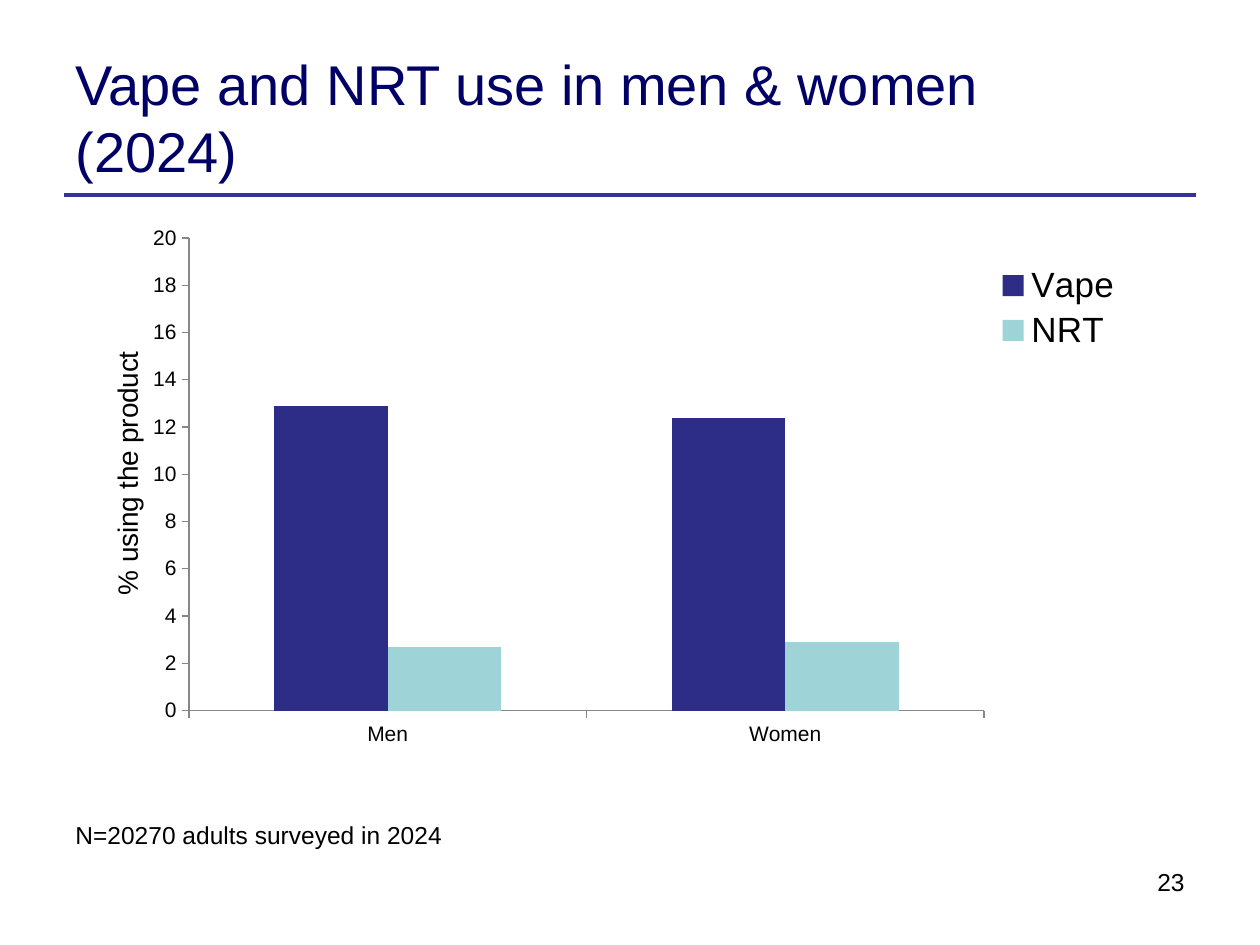
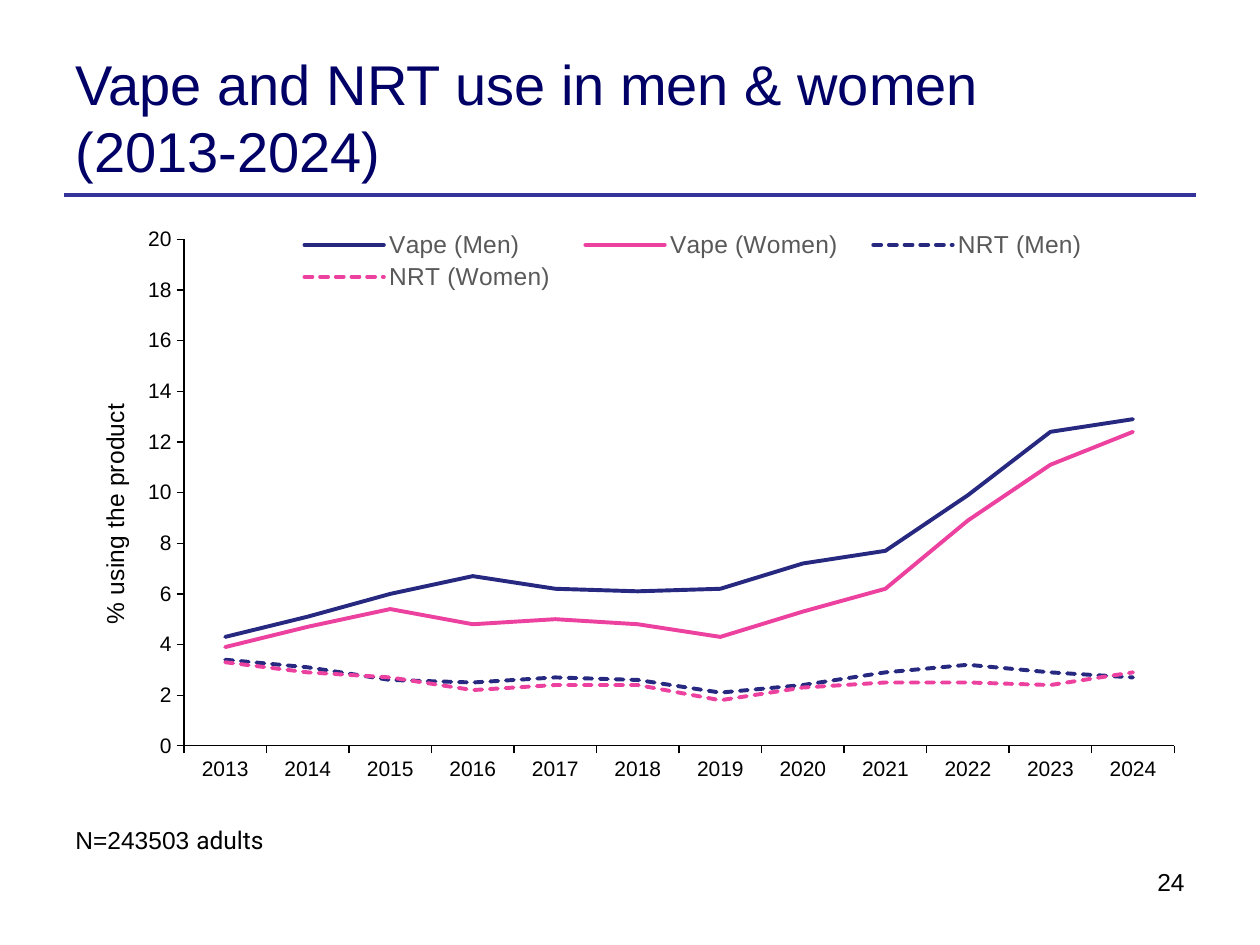
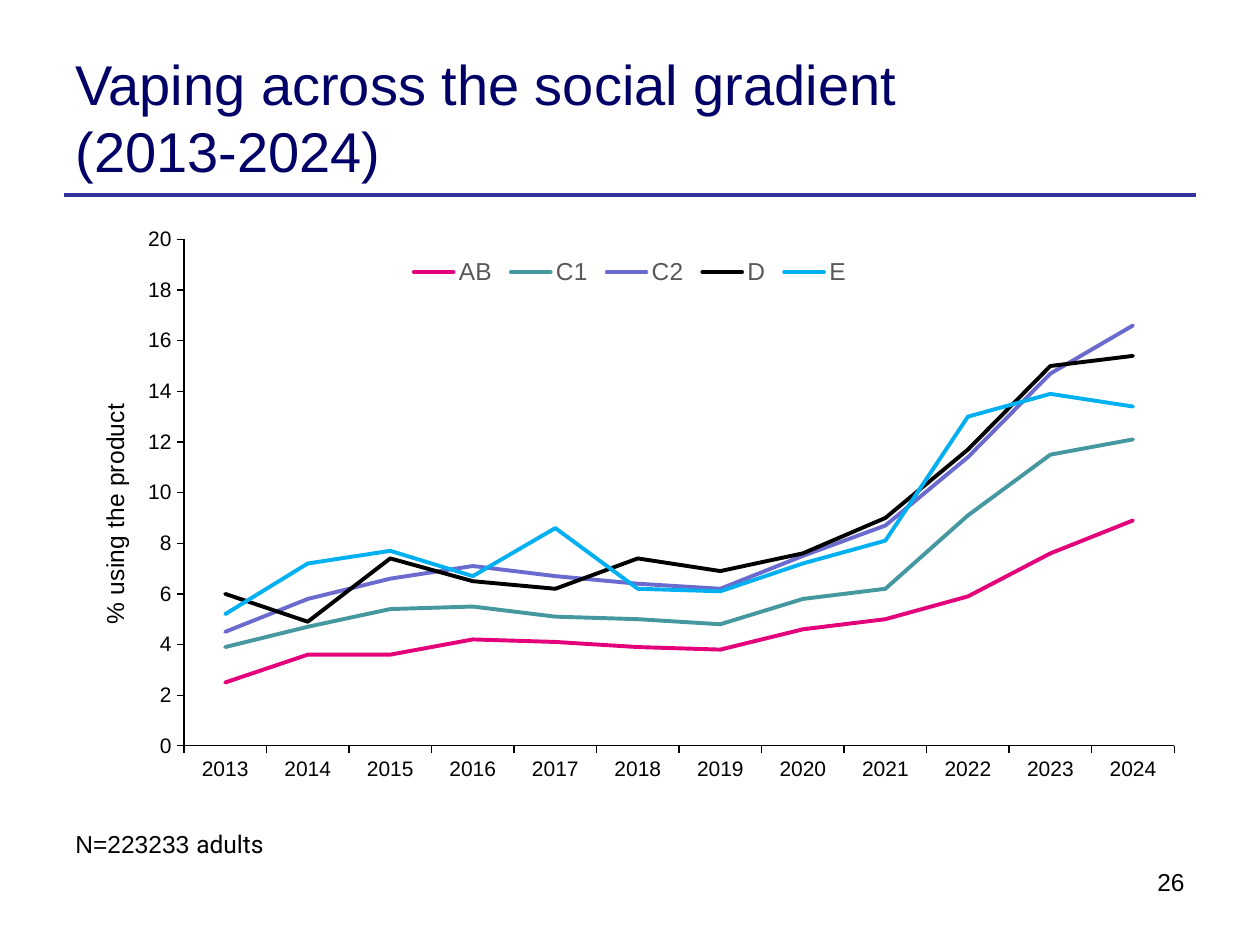
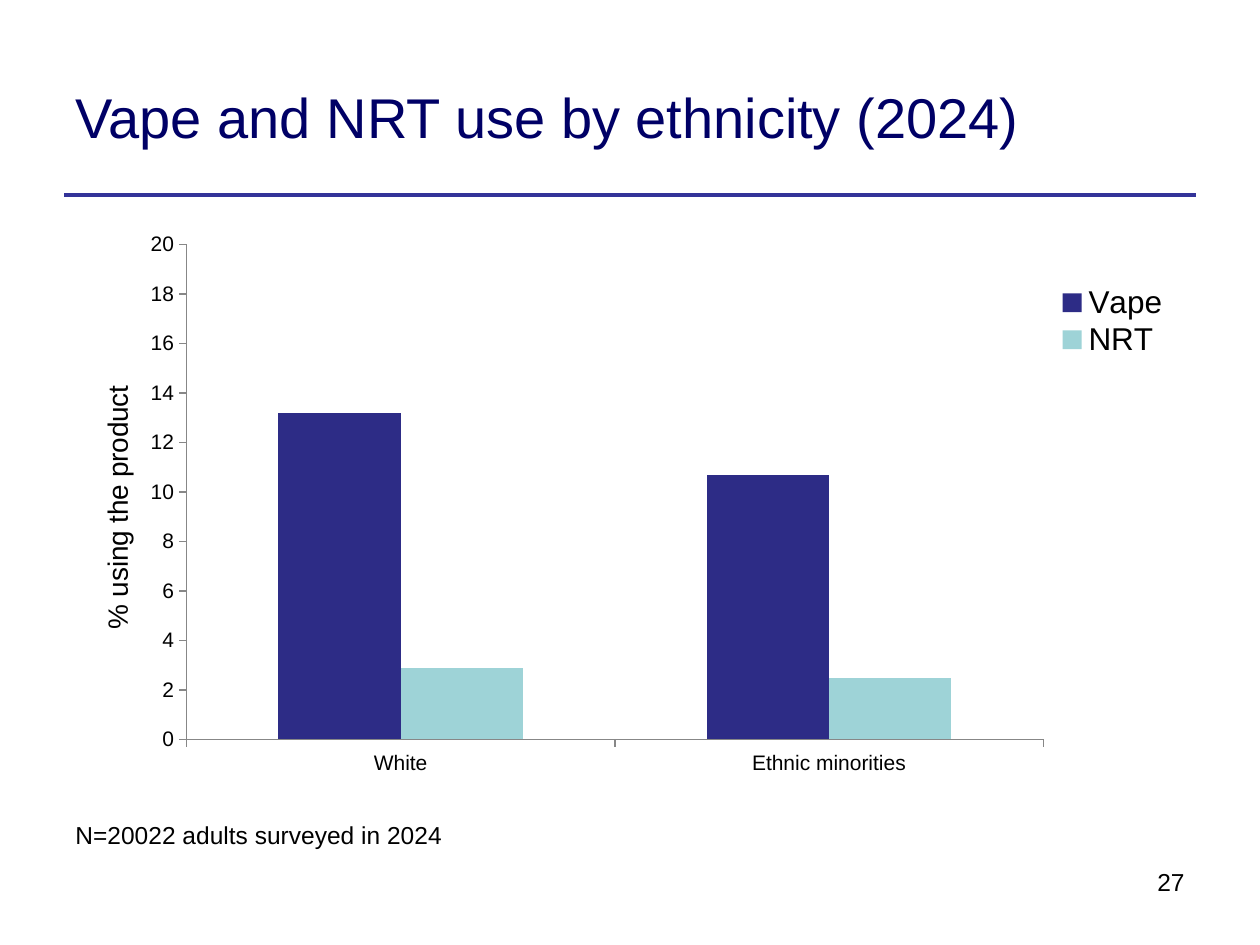
from dataclasses import dataclass

from lxml.etree import SubElement
from pptx import Presentation
from pptx.chart.data import CategoryChartData
from pptx.dml.color import RGBColor
from pptx.enum.chart import XL_CHART_TYPE, XL_LEGEND_POSITION, XL_TICK_MARK
from pptx.enum.dml import MSO_LINE
from pptx.enum.shapes import MSO_CONNECTOR
from pptx.enum.text import MSO_ANCHOR, PP_ALIGN
from pptx.oxml import parse_xml
from pptx.oxml.ns import nsdecls, qn
from pptx.util import Inches, Pt


@dataclass(frozen=True)
class Theme:
    """Colours, fonts and type sizes shared by the slides."""
    font: str = "Arial"
    note_font: str = "Roboto"
    title: str = "000066"
    rule: str = "333399"
    text: str = "000000"
    legend: str = "595959"
    bar_axis: str = "878787"
    vape: str = "2D2C86"
    nrt: str = "9ED3D7"
    men: str = "272880"
    women: str = "EC419F"
    title_size: int = 32
    note_size: int = 14
    tick_size: int = 12
    line_width: float = 2.25
    axis_width: float = 0.75


THEME = Theme()
TITLE_BOX = (0.5, 0.3, 7.89, 1.25)
NUMBER_BOX = (6.73, 6.83, 2.77, 0.52)
YEARS = [str(year) for year in range(2013, 2025)]
AXIS_TITLE = "% using the product"


@dataclass(frozen=True)
class ChartLayout:
    """Boxes in inches inside a chart, with its label sizes and colours."""
    plot: tuple
    axis_title: tuple
    legend: tuple
    axis_title_size: int
    legend_size: int
    legend_color: str
    axis_color: str


def style_font(font, size, color=THEME.text, name=THEME.font):
    """Set the face, size and colour of a font."""
    font.name, font.size, font.bold = name, Pt(size), False
    font.color.rgb = RGBColor.from_string(color)


def style_line(line, color, width):
    """Set the colour and width of a line."""
    line.color.rgb = RGBColor.from_string(color)
    line.width = Pt(width)


def add_text(slide, box, text, size, color=THEME.text, align=PP_ALIGN.LEFT,
             anchor=MSO_ANCHOR.TOP, wrap=True):
    """Add a one-paragraph text box and return its paragraph."""
    frame = slide.shapes.add_textbox(*map(Inches, box)).text_frame
    frame.word_wrap, frame.vertical_anchor = wrap, anchor
    paragraph = frame.paragraphs[0]
    paragraph.text, paragraph.alignment = text, align
    style_font(paragraph.font, size, color)
    return paragraph


def add_frame(presentation, title, number):
    """Add a slide with its title, rule and slide number."""
    slide = presentation.slides.add_slide(presentation.slide_layouts[6])
    rule = slide.shapes.add_connector(
        MSO_CONNECTOR.STRAIGHT, *map(Inches, (0.51, 1.55, 9.49, 1.55)))
    style_line(rule.line, THEME.rule, THEME.line_width)
    SubElement(rule._element.spPr, qn("a:effectLst"))
    add_text(slide, TITLE_BOX, title, THEME.title_size, THEME.title,
             anchor=MSO_ANCHOR.MIDDLE)
    add_text(slide, NUMBER_BOX, str(number), THEME.note_size,
             align=PP_ALIGN.RIGHT)
    return slide


def place(element, box, chart_box, after=None, inner=False):
    """Fix a chart part to a box given in inches inside the chart."""
    for layout in element.findall(qn("c:layout")):
        element.remove(layout)
    width, height = chart_box[2:]
    fractions = [length / side for length, side in zip(box, (width, height) * 2)]
    target = '<c:layoutTarget val="inner"/>' if inner else ""
    modes = '<c:xMode val="edge"/><c:yMode val="edge"/>'
    values = "".join(f'<c:{name} val="{value:.4f}"/>'
                     for name, value in zip("xywh", fractions))
    layout = parse_xml(f'<c:layout {nsdecls("c")}><c:manualLayout>{target}{modes}'
                       f'{values}</c:manualLayout></c:layout>')
    if after:
        element.find(qn(after)).addnext(layout)
    else:
        element.insert(0, layout)


def add_chart(slide, box, kind, categories, series, layout):
    """Add a chart with 0 to 20 value axis, placed legend and axis title."""
    data = CategoryChartData()
    data.categories = categories
    for name, values, *_ in series:
        data.add_series(name, values)
    chart = slide.shapes.add_chart(kind, *map(Inches, box), data).chart
    chart.has_title = False
    style_font(chart.font, THEME.tick_size)
    for axis in (chart.category_axis, chart.value_axis):
        axis.has_major_gridlines = False
        axis.major_tick_mark = XL_TICK_MARK.OUTSIDE
        axis.minor_tick_mark = XL_TICK_MARK.NONE
        style_font(axis.tick_labels.font, THEME.tick_size)
        style_line(axis.format.line, layout.axis_color, THEME.axis_width)
    value_axis = chart.value_axis
    value_axis.minimum_scale, value_axis.maximum_scale = 0, 20
    value_axis.major_unit = 2
    title = value_axis.axis_title
    paragraph = title.text_frame.paragraphs[0]
    paragraph.text = AXIS_TITLE
    style_font(paragraph.font, layout.axis_title_size)
    title._element.find(".//" + qn("a:bodyPr")).set("rot", "-5400000")
    place(title._element, layout.axis_title, box, "c:tx")
    chart.has_legend = True
    legend = chart.legend
    legend.position = XL_LEGEND_POSITION.RIGHT
    legend.include_in_layout = False
    style_font(legend.font, layout.legend_size, layout.legend_color)
    place(legend._element, layout.legend, box, "c:legendPos")
    place(chart._chartSpace.chart.plotArea, layout.plot, box, inner=True)
    chart.plots[0].vary_by_categories = False
    return chart


def add_bar_slide(presentation, title, number, note, box, categories,
                  vape, nrt, layout):
    """Add a slide comparing vape and NRT use in clustered columns."""
    slide = add_frame(presentation, title, number)
    series = [("Vape", vape, THEME.vape), ("NRT", nrt, THEME.nrt)]
    chart = add_chart(slide, box, XL_CHART_TYPE.COLUMN_CLUSTERED,
                      categories, series, layout)
    plot = chart.plots[0]
    plot.gap_width, plot.overlap = 150, 0
    for bars, (_, _, color) in zip(plot.series, series):
        bars.format.fill.solid()
        bars.format.fill.fore_color.rgb = RGBColor.from_string(color)
    add_text(slide, (0.5, 6.46, 3.12, 0.34), note, THEME.note_size, wrap=False)


def add_trend_slide(presentation, title, number, count, note_top, series, layout):
    """Add a slide with yearly trends as lines."""
    slide = add_frame(presentation, title, number)
    chart = add_chart(slide, (0.5, 1.72, 9, 4.95), XL_CHART_TYPE.LINE,
                      YEARS, series, layout)
    for trend, (_, _, color, dash) in zip(chart.plots[0].series, series):
        trend.smooth = False
        line = trend.format.line
        style_line(line, color, THEME.line_width)
        line._get_or_add_ln().set("cap", "rnd")
        if dash:
            line.dash_style = dash
    paragraph = add_text(slide, (0.5, note_top, 8.51, 0.34), f"N={count} ",
                         THEME.note_size)
    unit = paragraph.add_run()
    unit.text = "adults"
    unit.font.name = THEME.note_font


def bar_layout(plot, axis_title, legend, legend_size):
    """Return the layout of a column chart."""
    return ChartLayout(plot, axis_title, legend, 16, legend_size,
                       THEME.text, THEME.bar_axis)


def trend_layout(legend):
    """Return the layout of a line chart."""
    return ChartLayout((0.96, 0.18, 7.86, 4.02), (0.25, 1.45), legend, 14, 14,
                       THEME.legend, THEME.text)


def main():
    """Build the four slides and save them."""
    presentation = Presentation()
    presentation.slide_width, presentation.slide_height = Inches(10), Inches(7.5)
    add_bar_slide(
        presentation, "Vape and NRT use in men & women (2024)", 23,
        "N=20270 adults surveyed in 2024", (0.5, 1.75, 9, 4.48),
        ["Men", "Women"], (12.9, 12.4), (2.7, 2.9),
        bar_layout((1, 0.14, 6.31, 3.75), (0.33, 1), (7.25, 0.32, 1.3, 0.75), 20))
    dash = MSO_LINE.SQUARE_DOT
    add_trend_slide(
        presentation, "Vape and NRT use in men & women (2013-2024)", 24,
        243503, 6.5,
        [("Vape (Men)", (4.3, 5.1, 6, 6.7, 6.2, 6.1, 6.2, 7.2, 7.7, 9.9, 12.4, 12.9),
          THEME.men, None),
         ("Vape (Women)", (3.9, 4.7, 5.4, 4.8, 5, 4.8, 4.3, 5.3, 6.2, 8.9, 11.1, 12.4),
          THEME.women, None),
         ("NRT (Men)", (3.4, 3.1, 2.6, 2.5, 2.7, 2.6, 2.1, 2.4, 2.9, 3.2, 2.9, 2.7),
          THEME.men, dash),
         ("NRT (Women)", (3.3, 2.9, 2.7, 2.2, 2.4, 2.4, 1.8, 2.3, 2.5, 2.5, 2.4, 2.9),
          THEME.women, dash)],
        trend_layout((1.7, 0.08, 6.6, 0.54)))
    add_trend_slide(
        presentation, "Vaping across the social gradient (2013-2024)", 26,
        223233, 6.53,
        [("AB", (2.5, 3.6, 3.6, 4.2, 4.1, 3.9, 3.8, 4.6, 5, 5.9, 7.6, 8.9),
          "E5007B", None),
         ("C1", (3.9, 4.7, 5.4, 5.5, 5.1, 5, 4.8, 5.8, 6.2, 9.1, 11.5, 12.1),
          "4597A0", None),
         ("C2", (4.5, 5.8, 6.6, 7.1, 6.7, 6.4, 6.2, 7.5, 8.7, 11.4, 14.7, 16.6),
          "6B6BCF", None),
         ("D", (6, 4.9, 7.4, 6.5, 6.2, 7.4, 6.9, 7.6, 9, 11.7, 15, 15.4),
          "000000", None),
         ("E", (5.2, 7.2, 7.7, 6.7, 8.6, 6.2, 6.1, 7.2, 8.1, 13, 13.9, 13.4),
          "00B0F0", None)],
        trend_layout((2.7, 0.28, 3.6, 0.32)))
    add_bar_slide(
        presentation, "Vape and NRT use by ethnicity (2024)", 27,
        "N=20022 adults surveyed in 2024", (0.5, 1.77, 9, 4.48),
        ["White", "Ethnic minorities"], (13.2, 10.7), (2.9, 2.5),
        bar_layout((0.98, 0.17, 6.8, 3.93), (0.25, 1.25), (7.78, 0.48, 1.1, 0.6), 18))
    presentation.save("out.pptx")


if __name__ == "__main__":
    main()
